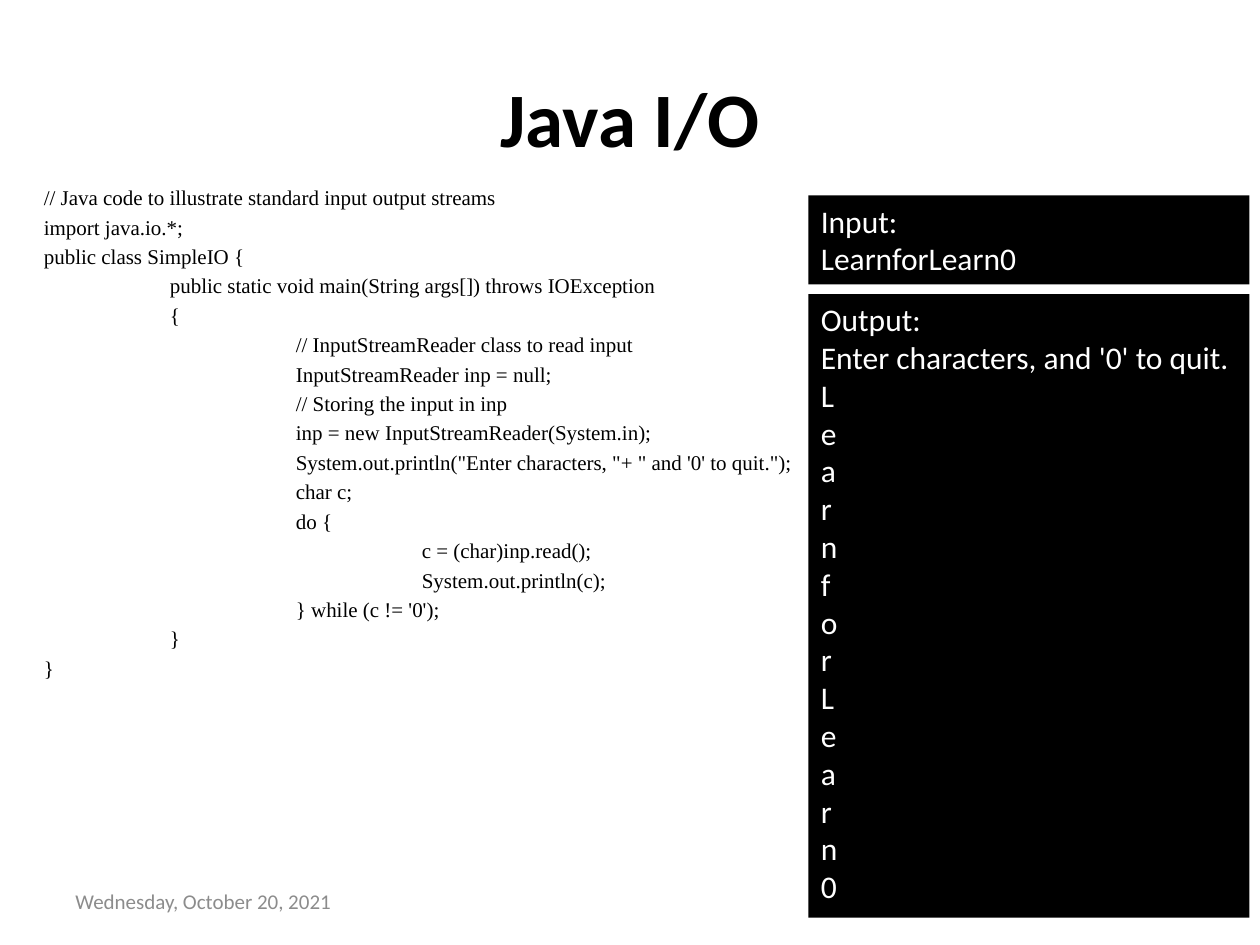
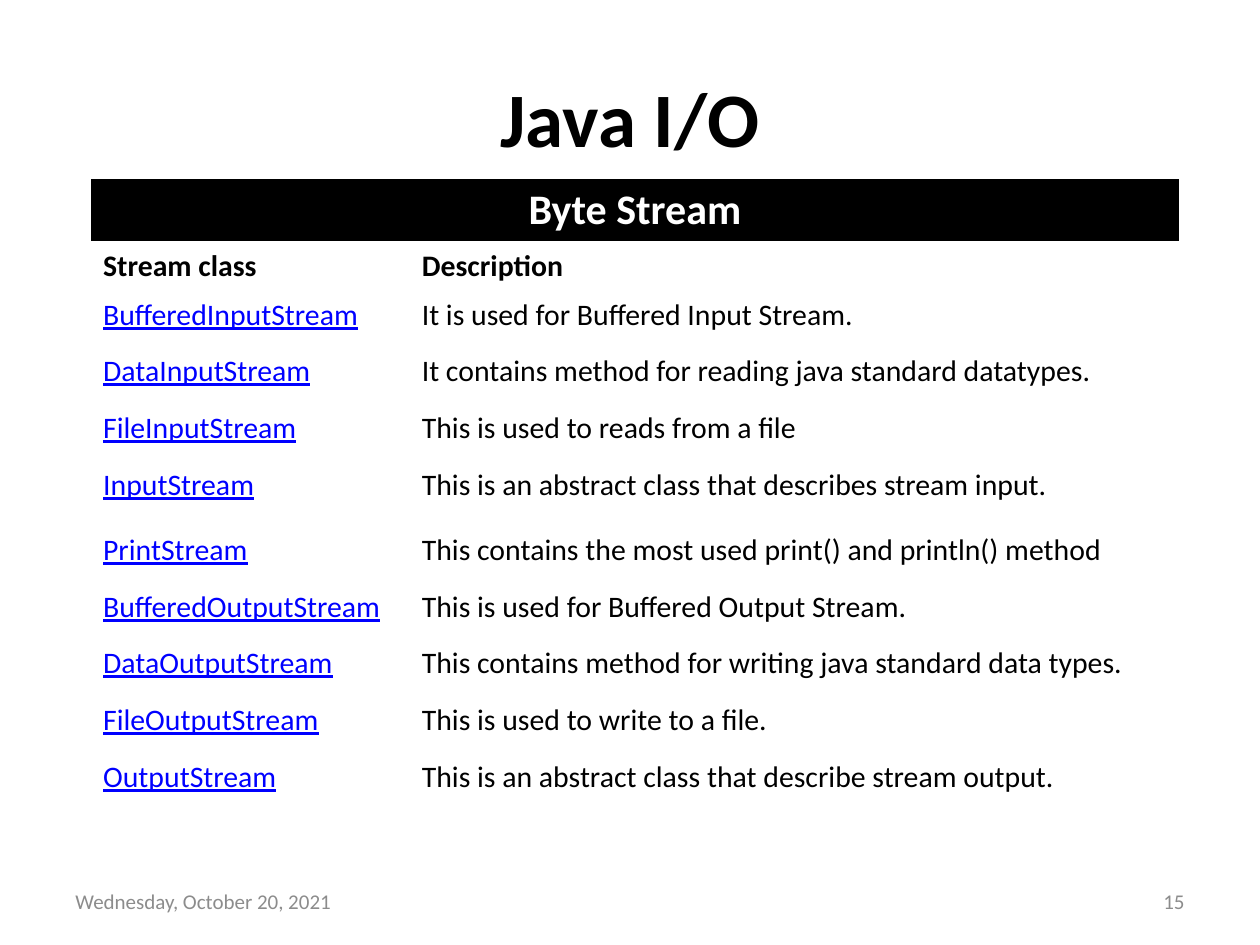
from pptx import Presentation
from pptx.dml.color import RGBColor
from pptx.enum.shapes import MSO_SHAPE as Shape
from pptx.enum.text import MSO_ANCHOR as Anchor, MSO_AUTO_SIZE as AutoSize, PP_ALIGN as Align
from pptx.util import Inches, Pt

WIDTH, HEIGHT = Inches(10), Inches(7.5)
COLUMNS, ROWS = 120, 90
CODE_INDENT = 12
COLORS = {"ink": "000000", "paper": "FFFFFF", "link": "0000FF", "footer": "8C8C8C"}
SANS, SERIF = "Calibri", "Times New Roman"
TITLE = "Java I/O"
DATE = "Wednesday, October 20, 2021"
TYPED = "LearnforLearn0"

CODE = """// Java code to illustrate standard input output streams
import java.io.*;
public class SimpleIO {
\tpublic static void main(String args[]) throws IOException
\t{
\t\t// InputStreamReader class to read input
\t\tInputStreamReader inp = null;
\t\t// Storing the input in inp
\t\tinp = new InputStreamReader(System.in);
\t\tSystem.out.println("Enter characters, "+ " and '0' to quit.");
\t\tchar c;
\t\tdo {
\t\t\tc = (char)inp.read();
\t\t\tSystem.out.println(c);
\t\t} while (c != '0');
\t}
}"""

LOW, TALL = 4.55, 6.2
BANNER_HEIGHT = 6.1
CLASS_WIDTH, DESCRIPTION_WIDTH = 30.35, 73.35
STREAMS = [
    ("BufferedInputStream", "It is used for Buffered Input Stream.", LOW),
    ("DataInputStream", "It contains method for reading java standard datatypes.", TALL),
    ("FileInputStream", "This is used to reads from a file", LOW),
    ("InputStream", "This is an abstract class that describes stream input.", TALL),
    ("PrintStream", "This contains the most used print() and println() method", TALL),
    ("BufferedOutputStream", "This is used for Buffered Output Stream.", LOW),
    ("DataOutputStream", "This contains method for writing java standard data types.", TALL),
    ("FileOutputStream", "This is used to write to a file.", LOW),
    ("OutputStream", "This is an abstract class that describe stream output.", TALL),
]


def across(columns):
    return int(WIDTH * columns / COLUMNS)


def down(rows):
    return int(HEIGHT * rows / ROWS)


def place(left, top, width, height):
    return across(left), down(top), across(width), down(height)


def color(name):
    return RGBColor.from_string(COLORS[name])


def indent(para, depth):
    para._p.get_or_add_pPr().set("marL", str(across(CODE_INDENT * depth)))


def write(frame, lines, size, ink="ink", face=SANS, align=Align.LEFT,
          bold=False, underline=False, before=0):
    for index, line in enumerate(lines):
        para = frame.add_paragraph() if index else frame.paragraphs[0]
        para.text = line.lstrip("\t")
        indent(para, line.count("\t"))
        para.alignment = align
        para.space_before = Pt(before)
        font = para.font
        font.name, font.size = face, Pt(size)
        font.bold, font.underline = bold, underline
        font.color.rgb = color(ink)


def add_text(page, area, lines, size, anchor=Anchor.MIDDLE, **style):
    frame = page.shapes.add_textbox(*place(*area)).text_frame
    frame.word_wrap = True
    frame.vertical_anchor = anchor
    write(frame, lines, size, **style)


def add_console(page, top, height, lines):
    box = page.shapes.add_shape(Shape.RECTANGLE, *place(77, top, 42, height))
    box.shadow.inherit = False
    box.fill.solid()
    box.fill.fore_color.rgb = color("ink")
    box.line.fill.background()
    frame = box.text_frame
    frame.word_wrap = True
    frame.auto_size = AutoSize.SHAPE_TO_FIT_TEXT
    frame.vertical_anchor = Anchor.TOP
    write(frame, lines, 18, ink="paper")


def add_page(deck):
    page = deck.slides.add_slide(deck.slide_layouts[6])
    add_text(page, (6, 3.6, 108, 15), [TITLE], 44, align=Align.CENTER, bold=True)
    add_text(page, (6, 83.4, 28, 4.8), [DATE], 12, ink="footer")
    return page


def fill_cell(cell, text, size=17, **style):
    cell.fill.background()
    cell.vertical_anchor = Anchor.MIDDLE
    write(cell.text_frame, [text], size, **style)


def add_stream_table(page):
    heights = [BANNER_HEIGHT, LOW] + [height for *_, height in STREAMS]
    area = place(8.62, 16.97, CLASS_WIDTH + DESCRIPTION_WIDTH, sum(heights))
    table = page.shapes.add_table(len(heights), 2, *area).table
    table.first_row = table.horz_banding = False
    for column, width in zip(table.columns, (CLASS_WIDTH, DESCRIPTION_WIDTH)):
        column.width = across(width)
    for row, height in zip(table.rows, heights):
        row.height = down(height)

    banner = table.cell(0, 0)
    banner.merge(table.cell(0, 1))
    fill_cell(banner, "Byte Stream", 24, ink="paper", align=Align.CENTER, bold=True)
    banner.fill.solid()
    banner.fill.fore_color.rgb = color("ink")
    for index, heading in enumerate(("Stream class", "Description")):
        fill_cell(table.cell(1, index), heading, bold=True)
    for index, (name, description, _) in enumerate(STREAMS, start=2):
        fill_cell(table.cell(index, 0), name, ink="link", underline=True)
        fill_cell(table.cell(index, 1), description)


def add_code_page(deck):
    page = add_page(deck)
    add_text(page, (3, 17, 115, 63.4), CODE.split("\n"), 12,
             anchor=Anchor.TOP, face=SERIF, before=2.4)
    add_console(page, 18.6, 8.5, ["Input:", TYPED])
    add_console(page, 28, 59.4,
                ["Output:", "Enter characters, and '0' to quit.", *TYPED])


def add_stream_page(deck):
    page = add_page(deck)
    add_stream_table(page)
    add_text(page, (86, 83.4, 28, 4.8), ["15"], 12, ink="footer", align=Align.RIGHT)


def main():
    deck = Presentation()
    deck.slide_width, deck.slide_height = WIDTH, HEIGHT
    add_code_page(deck)
    add_stream_page(deck)
    deck.save("out.pptx")


if __name__ == "__main__":
    main()
